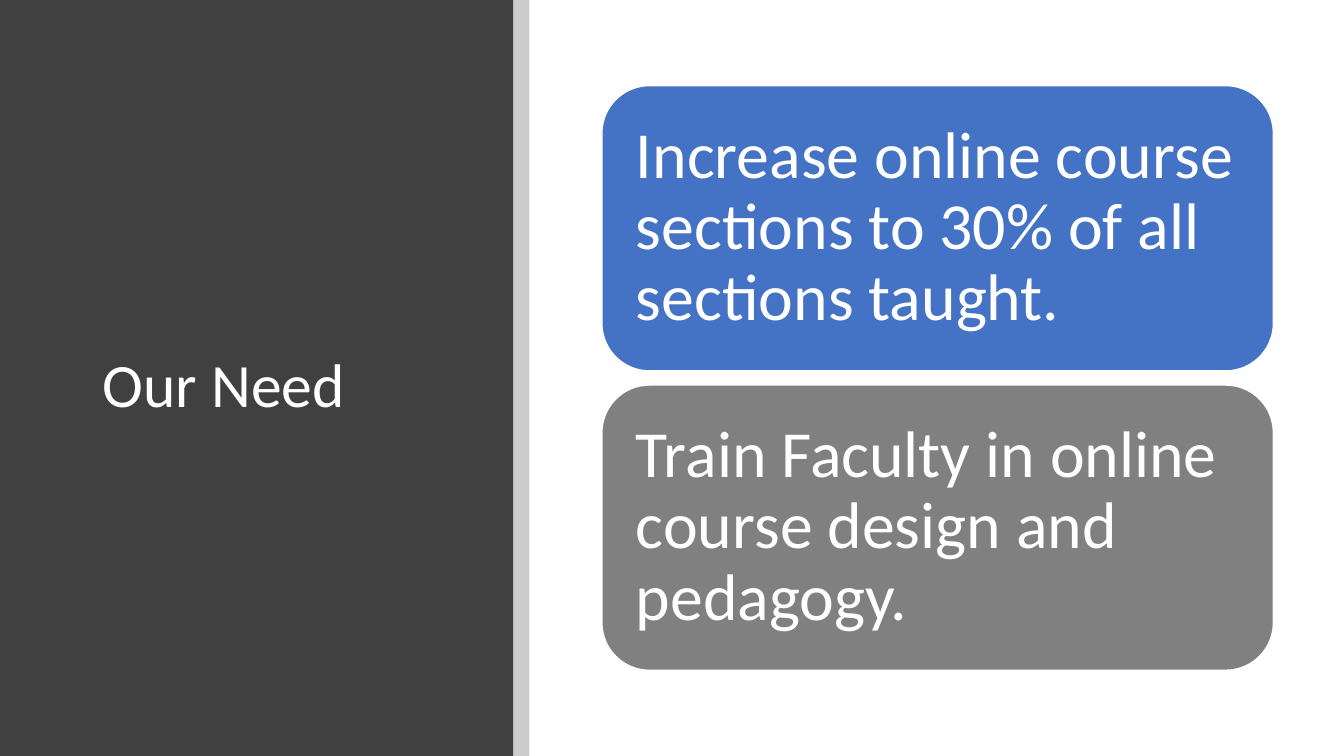
from dataclasses import dataclass

from lxml.etree import SubElement
from pptx import Presentation
from pptx.dml.color import RGBColor
from pptx.enum.shapes import MSO_SHAPE
from pptx.enum.text import MSO_ANCHOR, MSO_AUTO_SIZE, PP_ALIGN
from pptx.oxml.ns import qn
from pptx.shapes.autoshape import Shape
from pptx.slide import Slide
from pptx.util import Emu, Pt

COLORS = {
    "panel": "404040",
    "strip": "000000",
    "blue": "4472C4",
    "gray": "808080",
    "white": "FFFFFF",
}
FONT = "Calibri"
SCALE = 9144
WIDTH, HEIGHT = 1333, 750
CARD_X, CARD_Y, CARD_W, CARD_H = 597, 85, 666, 283
PITCH = 297
INSET = 20


@dataclass(frozen=True)
class Box:
    """A filled area in px."""
    left: int
    top: int
    width: int
    height: int
    color: str
    kind: MSO_SHAPE = MSO_SHAPE.RECTANGLE


@dataclass(frozen=True)
class Card:
    """A statement on a coloured card."""
    text: str
    color: str


PANEL = Box(0, 0, 509, HEIGHT, "panel")
STRIP = Box(509, 0, 16, HEIGHT, "strip")
CARDS = [
    Card("Increase online course sections to 30% of all sections taught.", "blue"),
    Card("Train Faculty in online course design and pedagogy.", "gray"),
]


def px(value: int) -> Emu:
    """Turn px into EMU."""
    return Emu(value * SCALE)


def paint(name: str) -> RGBColor:
    """Look up a named colour."""
    return RGBColor.from_string(COLORS[name])


def add_box(slide: Slide, box: Box) -> Shape:
    """Draw a plain filled box without outline or shadow."""
    shape = slide.shapes.add_shape(
        box.kind, px(box.left), px(box.top), px(box.width), px(box.height)
    )
    shape.shadow.inherit = False
    shape.fill.solid()
    shape.fill.fore_color.rgb = paint(box.color)
    shape.line.fill.background()
    return shape


def set_text(shape: Shape, text: str, size: int) -> None:
    """Write white, left-aligned, vertically centred text."""
    frame = shape.text_frame
    frame.text = text
    frame.word_wrap = True
    frame.auto_size = MSO_AUTO_SIZE.NONE
    frame.vertical_anchor = MSO_ANCHOR.MIDDLE
    line = frame.paragraphs[0]
    line.alignment = PP_ALIGN.LEFT
    line.line_spacing = 0.9
    font = line.runs[0].font
    font.name = FONT
    font.size = Pt(size)
    font.color.rgb = paint("white")


def add_title(slide: Slide, text: str) -> None:
    """Place the title over the dark panel."""
    title = slide.shapes.title
    title.left, title.top = px(92), px(89)
    title.width, title.height = px(365), px(591)
    set_text(title, text, 44)
    panel = add_box(slide, PANEL)
    title.element.addprevious(panel.element)


def add_strip(slide: Slide) -> None:
    """Draw the translucent strip beside the panel."""
    strip = add_box(slide, STRIP)
    tint = strip.element.spPr.find(f"{qn('a:solidFill')}/{qn('a:srgbClr')}")
    SubElement(tint, qn("a:alpha"), val="20000")


def add_card(slide: Slide, card: Card, top: int) -> None:
    """Draw one rounded card with its statement."""
    box = Box(CARD_X, top, CARD_W, CARD_H, card.color, MSO_SHAPE.ROUNDED_RECTANGLE)
    shape = add_box(slide, box)
    shape.line.color.rgb = paint("white")
    shape.line.width = Pt(1)
    set_text(shape, card.text, 47)
    frame = shape.text_frame
    frame.margin_left = frame.margin_right = px(INSET)
    frame.margin_top = frame.margin_bottom = px(INSET)


def main() -> None:
    """Build and save the slide."""
    deck = Presentation()
    deck.slide_width, deck.slide_height = px(WIDTH), px(HEIGHT)
    slide = deck.slides.add_slide(deck.slide_layouts[5])
    add_title(slide, "Our Need")
    add_strip(slide)
    for row, card in enumerate(CARDS):
        add_card(slide, card, CARD_Y + row * PITCH)
    deck.save("out.pptx")


if __name__ == "__main__":
    main()
